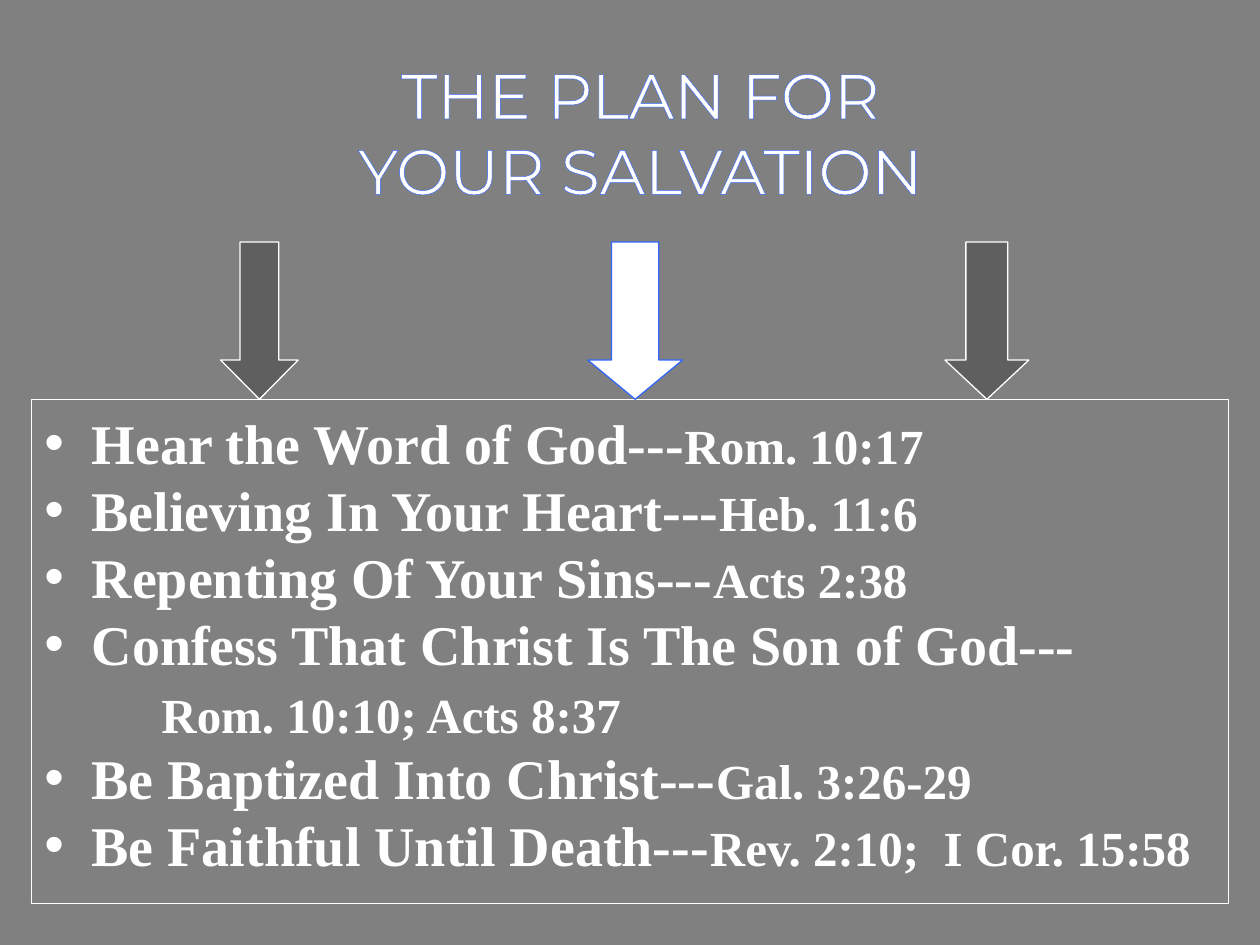
from dataclasses import dataclass

from lxml.etree import SubElement
from pptx import Presentation
from pptx.dml.color import RGBColor
from pptx.enum.shapes import MSO_SHAPE as SHAPE
from pptx.enum.text import MSO_ANCHOR as ANCHOR, MSO_AUTO_SIZE as AUTO, PP_ALIGN as ALIGN
from pptx.oxml.ns import qn
from pptx.util import Cm, Pt


@dataclass(frozen=True)
class Theme:
    background: str = "808080"
    white: str = "FFFFFF"
    blue: str = "3366FF"
    dark: str = "5F5F5F"
    title_font: str = "Montserrat"
    body_font: str = "Times New Roman"
    title_size: float = 36
    step_size: float = 32
    verse_size: float = 28
    line_pitch: float = 38.3
    line_width: float = 0.75


def rgb(value):
    return RGBColor.from_string(value)


class SlideBuilder:
    def __init__(self, prs, theme):
        self.theme = theme
        self.slide = prs.slides.add_slide(prs.slide_layouts[1])
        fill = self.slide.background.fill
        fill.solid()
        fill.fore_color.rgb = rgb(theme.background)

    def place(self, sp, left, top, width, height):
        sp.left, sp.top, sp.width, sp.height = map(Cm, (left, top, width, height))

    def style_line(self, sp, color):
        sp.line.color.rgb = rgb(color)
        sp.line.width = Pt(self.theme.line_width)

    def style_font(self, font, name, size, bold):
        font.name, font.size, font.bold = name, Pt(size), bold
        font.color.rgb = rgb(self.theme.white)

    def outline_text(self, r, color):
        """Draw a coloured contour around the letters of a run."""
        rPr = r.font._element if hasattr(r.font, "_element") else r._r.get_or_add_rPr()
        ln = SubElement(rPr, qn("a:ln"), w=str(Pt(self.theme.line_width)))
        SubElement(SubElement(ln, qn("a:solidFill")), qn("a:srgbClr"), val=color)
        rPr.insert(0, ln)

    def title(self, lines, box):
        t = self.theme
        sp = self.slide.shapes.title
        self.place(sp, *box)
        tf = sp.text_frame
        tf.auto_size, tf.vertical_anchor = AUTO.NONE, ANCHOR.MIDDLE
        tf.text = "\n".join(lines)
        for p in tf.paragraphs:
            p.alignment = ALIGN.CENTER
            self.style_font(p.font, t.title_font, t.title_size, False)
            for r in p.runs:
                self.outline_text(r, t.blue)

    def steps(self, rows, box):
        """Fill the list with (step, verse) rows; a row without a step is an indented verse."""
        t = self.theme
        sp = self.slide.placeholders[1]
        self.place(sp, *box)
        self.style_line(sp, t.white)
        tf = sp.text_frame
        tf.auto_size, tf.vertical_anchor, tf.margin_top = AUTO.NONE, ANCHOR.TOP, Cm(0.18)
        for i, (step, verse) in enumerate(rows):
            p = tf.add_paragraph() if i else tf.paragraphs[0]
            p.line_spacing, p.space_before = Pt(t.line_pitch), Pt(0)
            self.style_font(p.font, t.body_font, t.step_size, True)
            if not step:
                pPr = p._p.get_or_add_pPr()
                pPr.set("marL", str(Cm(2.36)))
                pPr.set("indent", "0")
                pPr.insert_element_before(pPr.makeelement(qn("a:buNone")), "a:tabLst", "a:defRPr")
            for text, size in ((step, t.step_size), (verse, t.verse_size)):
                if text:
                    r = p.add_run()
                    r.text = text
                    r.font.size = Pt(size)

    def down_arrow(self, left, width, fill, line, top=4.88, height=3.17, head=0.79):
        sp = self.slide.shapes.add_shape(
            SHAPE.DOWN_ARROW, *map(Cm, (left, top, width, height)))
        sp.adjustments[0], sp.adjustments[1] = 0.5, head / width
        sp.shadow.inherit = False
        sp.fill.solid()
        sp.fill.fore_color.rgb = rgb(fill)
        self.style_line(sp, line)


def main():
    prs = Presentation()
    prs.slide_width, prs.slide_height = Cm(25.4), Cm(19.05)
    theme = Theme()
    s = SlideBuilder(prs, theme)

    s.title(["THE PLAN FOR", "YOUR SALVATION"], (2.96, 0.85, 19.9, 3.6))
    s.steps([
        ("Hear the Word of God---", "Rom. 10:17"),
        ("Believing In Your Heart---", "Heb. 11:6"),
        ("Repenting Of Your Sins---", "Acts 2:38"),
        ("Confess That Christ Is The Son of God---", ""),
        ("", "Rom. 10:10; Acts 8:37"),
        ("Be Baptized Into Christ---", "Gal. 3:26-29"),
        ("Be Faithful Until Death---", "Rev. 2:10;  I Cor. 15:58"),
    ], (0.64, 8.05, 24.13, 10.16))

    for left, width, fill, line in (
        (4.45, 1.56, theme.dark, theme.white),
        (19.05, 1.69, theme.dark, theme.white),
        (11.85, 1.91, theme.white, theme.blue),
    ):
        s.down_arrow(left, width, fill, line)

    prs.save("out.pptx")


if __name__ == "__main__":
    main()
